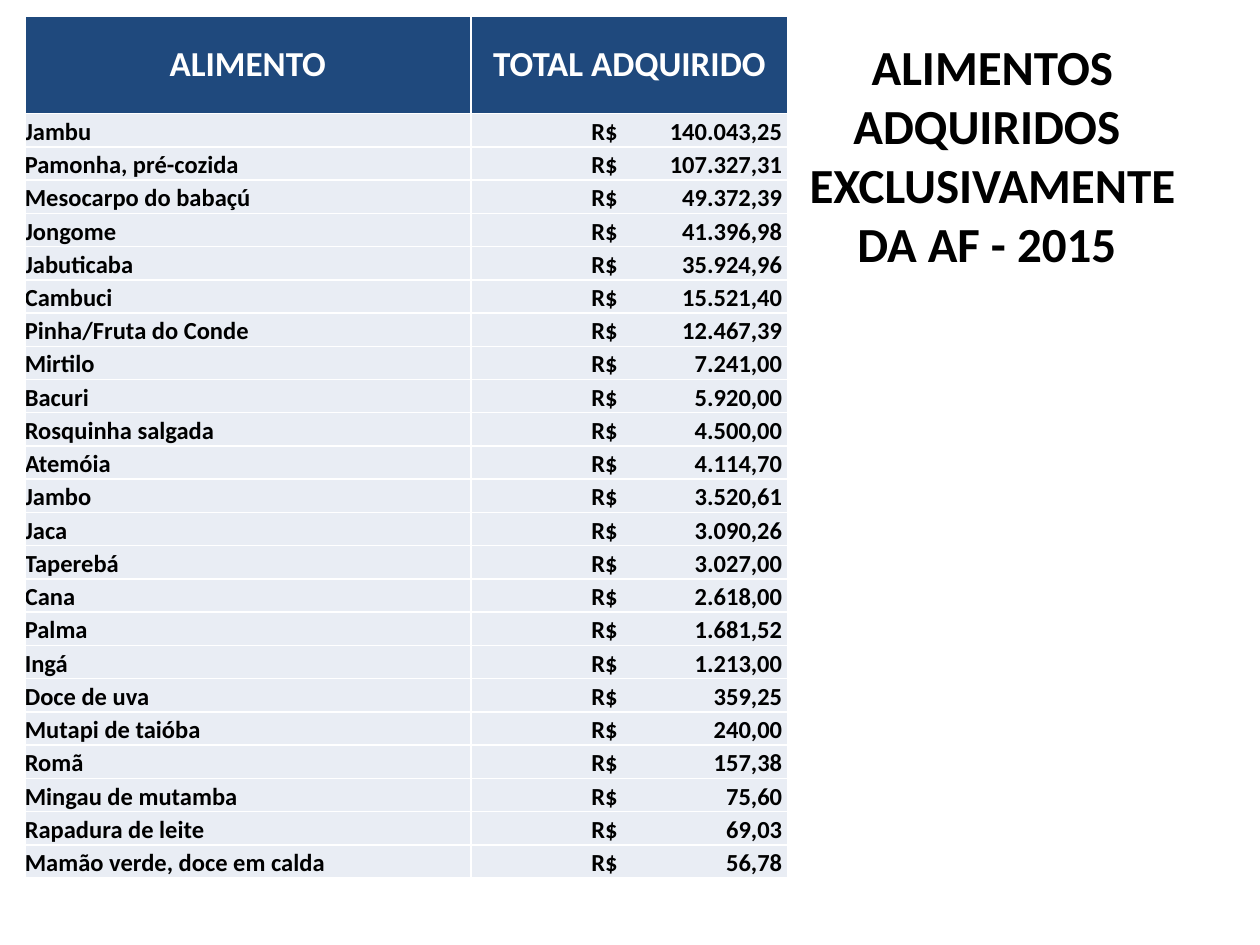
from lxml import etree
from pptx import Presentation
from pptx.dml.color import RGBColor
from pptx.enum.text import MSO_ANCHOR, PP_ALIGN
from pptx.oxml.ns import qn
from pptx.util import Cm, Pt

LEFT, MID = PP_ALIGN.LEFT, PP_ALIGN.CENTER
CENTER, LOW = MSO_ANCHOR.MIDDLE, MSO_ANCHOR.BOTTOM

FOODS = [
    ("Jambu", "140.043,25"),
    ("Pamonha, pré-cozida", "107.327,31"),
    ("Mesocarpo do babaçú", "49.372,39"),
    ("Jongome", "41.396,98"),
    ("Jabuticaba", "35.924,96"),
    ("Cambuci", "15.521,40"),
    ("Pinha/Fruta do Conde", "12.467,39"),
    ("Mirtilo", "7.241,00"),
    ("Bacuri", "5.920,00"),
    ("Rosquinha salgada", "4.500,00"),
    ("Atemóia", "4.114,70"),
    ("Jambo", "3.520,61"),
    ("Jaca", "3.090,26"),
    ("Taperebá", "3.027,00"),
    ("Cana", "2.618,00"),
    ("Palma", "1.681,52"),
    ("Ingá", "1.213,00"),
    ("Doce de uva", "359,25"),
    ("Mutapi de taióba", "240,00"),
    ("Romã", "157,38"),
    ("Mingau de mutamba", "75,60"),
    ("Rapadura de leite", "69,03"),
    ("Mamão verde, doce em calda", "56,78"),
]


def color(code):
    return RGBColor.from_string(code)


def write(frame, text, size=14, ink="000000", align=LEFT):
    frame.text = text
    for para in frame.paragraphs:
        para.alignment = align
        for run in para.runs:
            run.font.name = "Calibri"
            run.font.size = Pt(size)
            run.font.bold = True
            run.font.color.rgb = color(ink)


prs = Presentation()
prs.slide_width, prs.slide_height = Cm(25.4), Cm(19.05)
slide = prs.slides.add_slide(prs.slide_layouts[6])

title = slide.shapes.add_textbox(Cm(15.7), Cm(1.12), Cm(8.61), Cm(3.99))
title.text_frame.word_wrap = True
title.text_frame.vertical_anchor = CENTER
write(title.text_frame, "ALIMENTOS ADQUIRIDOS \vEXCLUSIVAMENTE DA AF - 2015 ",
      size=28, align=MID)

rows = [("ALIMENTO", "TOTAL ADQUIRIDO")]
rows += [(food, f"R$\t{total}") for food, total in FOODS]
table = slide.shapes.add_table(
    len(rows), 2, Cm(0.5), Cm(0.33), Cm(15.39), Cm(17.37)).table
table.horz_banding = False
table.columns[0].width, table.columns[1].width = Cm(8.99), Cm(6.4)

for r, row in enumerate(rows):
    head = r == 0
    table.rows[r].height = Cm(1.96 if head else 0.67)
    for c, text in enumerate(row):
        cell = table.cell(r, c)
        cell.margin_left = cell.margin_right = 0
        cell.margin_top = cell.margin_bottom = 0
        cell.vertical_anchor = CENTER if head else LOW
        props = cell._tc.get_or_add_tcPr()
        for side in ("lnL", "lnR", "lnT", "lnB"):
            line = etree.SubElement(props, qn(f"a:{side}"), w=str(Pt(1)))
            paint = etree.SubElement(line, qn("a:solidFill"))
            etree.SubElement(paint, qn("a:srgbClr"), val="FFFFFF")
        cell.fill.solid()
        cell.fill.fore_color.rgb = color("1F497D" if head else "E9EDF4")
        if head:
            write(cell.text_frame, text, size=20, ink="FFFFFF", align=MID)
            continue
        write(cell.text_frame, text)
        if c == 1:
            cell.margin_left = Cm(2.43)
            para = cell.text_frame.paragraphs[0]._p.get_or_add_pPr()
            tabs = etree.SubElement(para, qn("a:tabLst"))
            etree.SubElement(tabs, qn("a:tab"), pos=str(Cm(3.85)), algn="r")

prs.save("out.pptx")
